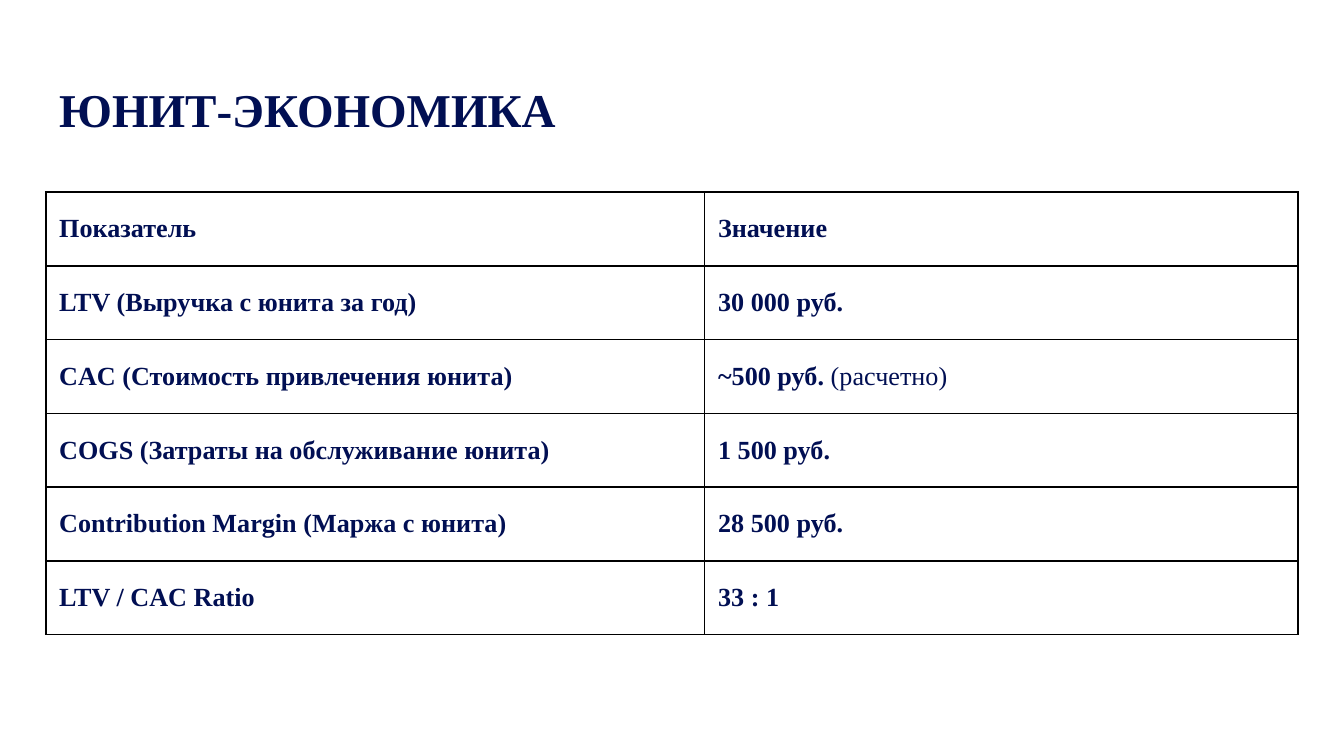
from lxml import etree
from pptx import Presentation
from pptx.dml.color import RGBColor
from pptx.enum import text
from pptx.oxml.ns import qn
from pptx.util import Pt

FONT = "Times New Roman"
NAVY = "010F53"
BLACK = "000000"

ROWS = [
    ("Показатель", "Значение"),
    ("LTV (Выручка с юнита за год)", "30 000 руб."),
    ("CAC (Стоимость привлечения юнита)", "~500 руб."),
    ("COGS (Затраты на обслуживание юнита)", "1 500 руб."),
    ("Contribution Margin (Маржа с юнита)", "28 500 руб."),
    ("LTV / CAC Ratio", "33 : 1"),
]
CAC_ROW = 2


def color(value):
    return RGBColor.from_string(value)


def add_text(paragraph, content, size=14, bold=True, fill=NAVY):
    paragraph.alignment = text.PP_ALIGN.LEFT
    run = paragraph.add_run()
    run.text = content
    run.font.name = FONT
    run.font.size = Pt(size)
    run.font.bold = bold
    run.font.color.rgb = color(fill)


def set_borders(cell, line_color=BLACK, width=1):
    properties = cell._tc.get_or_add_tcPr()
    for side in ("lnL", "lnR", "lnT", "lnB"):
        line = etree.SubElement(properties, qn(f"a:{side}"), w=str(Pt(width)))
        fill = etree.SubElement(line, qn("a:solidFill"))
        etree.SubElement(fill, qn("a:srgbClr"), val=line_color)


def place_title(slide, left, top, width, height):
    title = slide.shapes.title
    title.left, title.top = Pt(left), Pt(top)
    title.width, title.height = Pt(width), Pt(height)
    frame = title.text_frame
    frame.auto_size = text.MSO_AUTO_SIZE.NONE
    frame.word_wrap = True
    frame.vertical_anchor = text.MSO_ANCHOR.BOTTOM
    frame.margin_left = frame.margin_right = Pt(7.2)
    frame.margin_top = frame.margin_bottom = Pt(7.2)
    add_text(frame.paragraphs[0], "ЮНИТ-ЭКОНОМИКА", size=25.2)


def place_table(slide, left, top, width, height, first_width):
    table = slide.shapes.add_table(
        len(ROWS), 2, Pt(left), Pt(top), Pt(width), Pt(height)
    ).table
    table.first_row = False
    table.horz_banding = False
    table.columns[0].width = Pt(first_width)
    table.columns[1].width = Pt(width - first_width)
    for row_index, values in enumerate(ROWS):
        table.rows[row_index].height = Pt(height / len(ROWS))
        for column_index, value in enumerate(values):
            cell = table.cell(row_index, column_index)
            set_borders(cell)
            cell.fill.background()
            cell.vertical_anchor = text.MSO_ANCHOR.MIDDLE
            cell.margin_left = Pt(7.2)
            cell.margin_right = Pt(7.2)
            cell.margin_top = cell.margin_bottom = Pt(11.5)
            add_text(cell.text_frame.paragraphs[0], value)
    estimate = table.cell(CAC_ROW, 1).text_frame.paragraphs[0]
    add_text(estimate, " (расчетно)", bold=False)


def main():
    presentation = Presentation()
    presentation.slide_width = Pt(720)
    presentation.slide_height = Pt(405)
    slide = presentation.slides.add_slide(presentation.slide_layouts[5])
    place_title(slide, 24.5, 35.3, 671, 45.1)
    place_table(slide, 24.5, 103, 671, 237, first_width=353)
    presentation.save("out.pptx")


if __name__ == "__main__":
    main()
